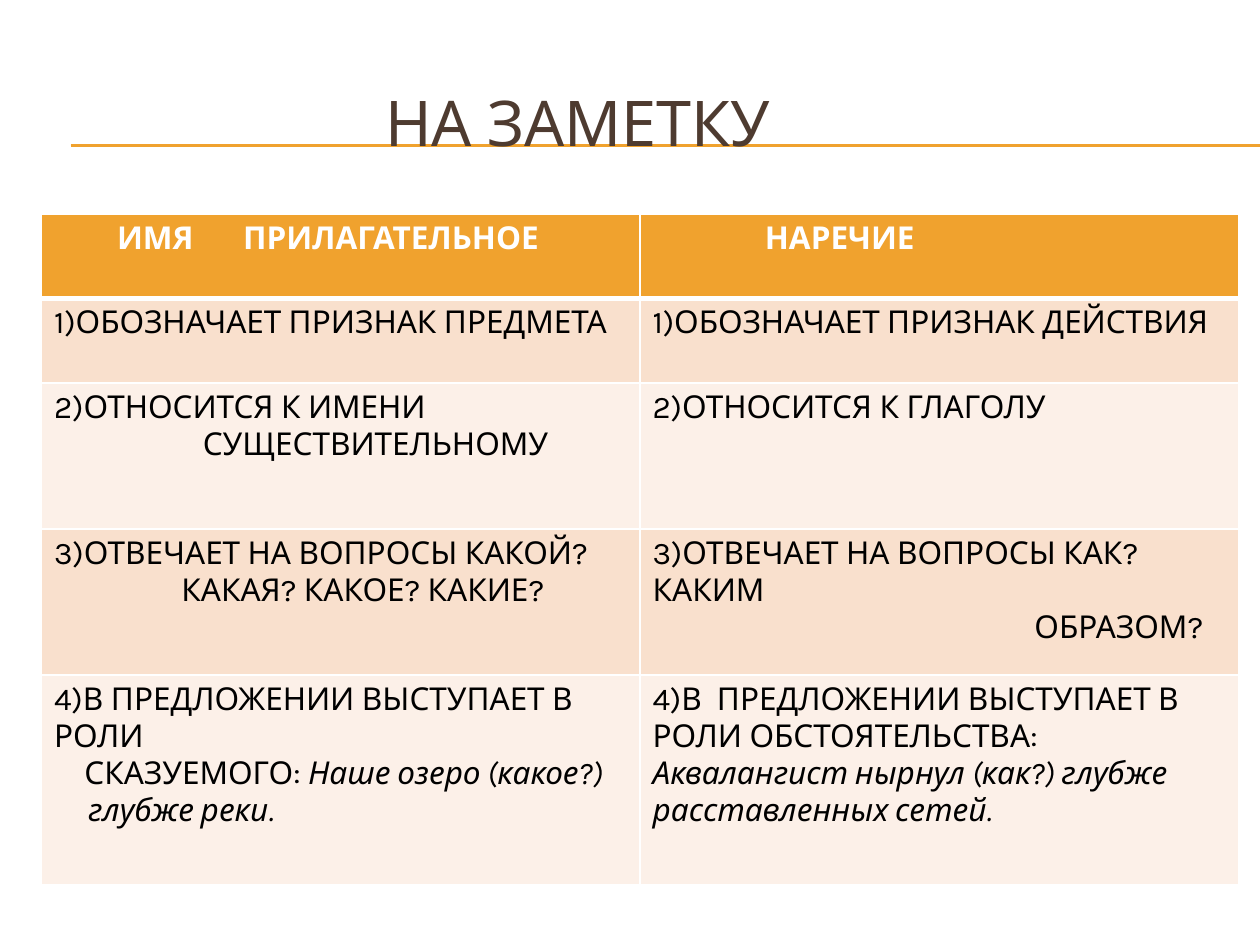
from lxml.etree import SubElement
from pptx import Presentation
from pptx.dml.color import RGBColor
from pptx.enum.shapes import MSO_CONNECTOR
from pptx.enum.text import MSO_ANCHOR
from pptx.oxml.ns import qn
from pptx.util import Inches, Pt

COLORS = {"accent": "F0A22E", "title": "4E3B30", "white": "FFFFFF",
          "black": "000000", "odd": "F9E0CD", "even": "FCF0E8"}
FONT = "Karla"
TITLE = (2.63, "НА ЗАМЕТКУ")
RULES = [1.15, 1.16]
ROW_HEIGHTS = [0.67, 0.67, 1.16, 1.16, 1.66]
COLUMN_WIDTH = 4.75
HEADER_TABS = [0.57, 1.62]
ROWS = [
    ([(0, "\tИМЯ\tПРИЛАГАТЕЛЬНОЕ")], [(0.89, "НАРЕЧИЕ")]),
    ([(0, "1)ОБОЗНАЧАЕТ ПРИЗНАК ПРЕДМЕТА")],
     [(0, "1)ОБОЗНАЧАЕТ ПРИЗНАК ДЕЙСТВИЯ")]),
    ([(0, "2)ОТНОСИТСЯ К ИМЕНИ"), (1.18, "СУЩЕСТВИТЕЛЬНОМУ")],
     [(0, "2)ОТНОСИТСЯ К ГЛАГОЛУ")]),
    ([(0, "3)ОТВЕЧАЕТ НА ВОПРОСЫ КАКОЙ?"), (1.01, "КАКАЯ? КАКОЕ? КАКИЕ?")],
     [(0, "3)ОТВЕЧАЕТ НА ВОПРОСЫ КАК? КАКИМ"), (3.03, "ОБРАЗОМ?")]),
    ([(0, "4)В ПРЕДЛОЖЕНИИ ВЫСТУПАЕТ В РОЛИ"),
      (0.24, "СКАЗУЕМОГО: ", "Наше озеро (какое?)"),
      (0.27, "", "глубже реки.")],
     [(0, "4)В  ПРЕДЛОЖЕНИИ ВЫСТУПАЕТ В РОЛИ ОБСТОЯТЕЛЬСТВА: ",
       "Аквалангист нырнул (как?) глубже расставленных сетей.")]),
]


def color(name):
    return RGBColor.from_string(COLORS[name])


def write_lines(text_frame, lines, color_name, **font_values):
    for index, (indent, *parts) in enumerate(lines):
        paragraph = text_frame.paragraphs[0] if index == 0 else text_frame.add_paragraph()
        properties = paragraph._p.get_or_add_pPr()
        properties.set("marL", str(Inches(indent)))
        properties.set("indent", "0")
        if "\t" in parts[0]:
            tabs = SubElement(properties, qn("a:tabLst"))
            for position in HEADER_TABS:
                SubElement(tabs, qn("a:tab"), pos=str(Inches(position)), algn="l")
        for italic, text in enumerate(parts):
            if text:
                run = paragraph.add_run()
                run.text = text
                values = {"name": FONT, "italic": bool(italic), **font_values}
                for name, value in values.items():
                    setattr(run.font, name, value)
                run.font.color.rgb = color(color_name)


def set_borders(cell, widths):
    properties = cell._tc.get_or_add_tcPr()
    for side, width in widths.items():
        line = SubElement(properties, qn(f"a:ln{side}"), w=str(Pt(width)))
        fill = SubElement(line, qn("a:solidFill"))
        SubElement(fill, qn("a:srgbClr"), val=COLORS["white"])


presentation = Presentation()
presentation.slide_width, presentation.slide_height = Inches(10), Inches(7.5)
slide = presentation.slides.add_slide(presentation.slide_layouts[6])

for y in RULES:
    rule = slide.shapes.add_connector(
        MSO_CONNECTOR.STRAIGHT, Inches(0.56), Inches(y), Inches(10), Inches(y))
    rule.line.color.rgb = color("accent")
    rule.line.width = Pt(0.75)
    SubElement(rule._element.spPr, qn("a:effectLst"))

title = slide.shapes.add_textbox(Inches(0.33), Inches(0.5), Inches(9.5), Inches(0.92))
title.text_frame.word_wrap = True
title.text_frame.vertical_anchor = MSO_ANCHOR.MIDDLE
write_lines(title.text_frame, [TITLE], "title", size=Pt(36))

table = slide.shapes.add_table(
    len(ROWS), 2, Inches(0.33), Inches(1.7),
    Inches(2 * COLUMN_WIDTH), Inches(sum(ROW_HEIGHTS))).table
for column in table.columns:
    column.width = Inches(COLUMN_WIDTH)
for row_index, (height, cells) in enumerate(zip(ROW_HEIGHTS, ROWS)):
    table.rows[row_index].height = Inches(height)
    header = row_index == 0
    fill_name = "accent" if header else "odd" if row_index % 2 else "even"
    widths = {"L": 1, "R": 1, "T": 3 if row_index == 1 else 1, "B": 3 if header else 1}
    for column_index, lines in enumerate(cells):
        cell = table.cell(row_index, column_index)
        set_borders(cell, widths)
        cell.fill.solid()
        cell.fill.fore_color.rgb = color(fill_name)
        write_lines(cell.text_frame, lines, "white" if header else "black",
                    size=Pt(18), bold=header)

presentation.save("out.pptx")
